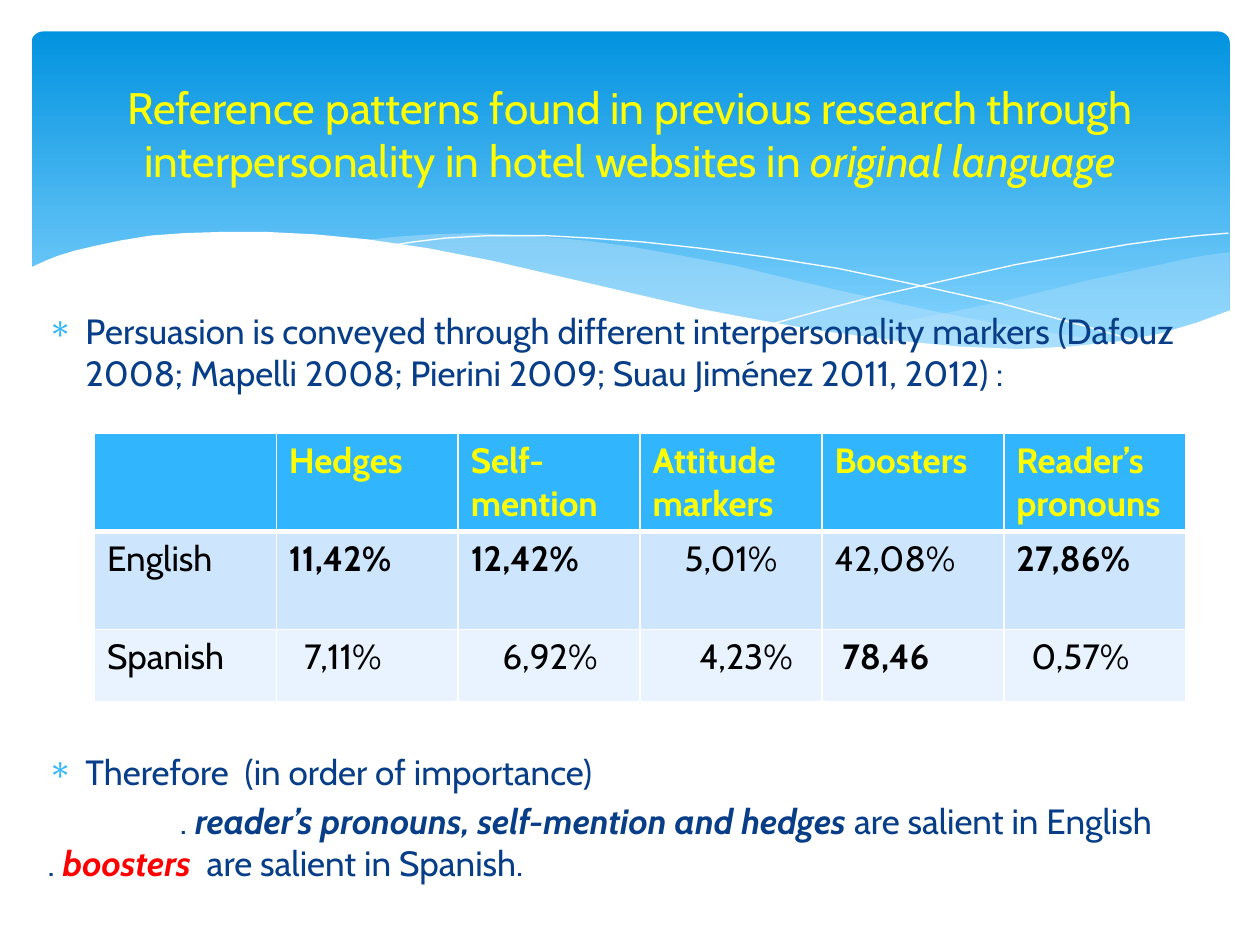
"""Build a slide on interpersonality markers in hotel websites."""
from lxml import etree
from pptx import Presentation
from pptx.dml.color import RGBColor
from pptx.enum.shapes import MSO_SHAPE
from pptx.enum.text import MSO_ANCHOR, PP_ALIGN
from pptx.oxml.ns import qn
from pptx.util import Inches, Pt

ROUNDED = MSO_SHAPE.ROUNDED_RECTANGLE
CENTER, LEFT = PP_ALIGN.CENTER, PP_ALIGN.LEFT
MIDDLE = MSO_ANCHOR.MIDDLE
TITLE_ONLY = 5
FONT = "Cabin"
COLORS = {
    "sky_top": "0293E0", "sky_bottom": "83D3FE", "mist": "C6E7FC",
    "white": "FFFFFF", "title": "FFFF00", "body": "073E87",
    "accent": "31B6FD", "alert": "FF0000", "black": "000000",
    "row_odd": "CEE5FE", "row_even": "E8F3FF",
}

RIGHT_MIST = [
    (976, 200), (948, 204), (921, 210), (861, 223), (805, 237), (753, 248),
    (706, 257), (661, 265), (691, 269), (732, 274), (769, 277), (803, 278),
    (835, 277), (863, 275), (889, 272), (913, 267), (935, 262), (949, 257),
    (976, 247)]
CENTER_MIST = [
    (893, 273), (866, 269), (807, 260), (741, 247), (668, 231), (629, 222),
    (584, 211), (541, 203), (502, 196), (465, 191), (420, 187), (380, 185),
    (344, 186), (313, 188), (286, 191), (323, 196), (362, 203), (404, 211),
    (449, 222), (530, 240), (601, 255), (665, 266), (722, 274), (773, 277),
    (818, 278), (857, 277)]
FALLING_LINE = [
    (309, 195), (328, 192), (353, 189), (387, 187), (433, 187), (469, 189),
    (510, 192), (556, 197), (608, 204), (665, 213), (727, 226), (795, 241),
    (869, 261), (907, 272)]
RISING_LINE = [
    (613, 257), (653, 246), (695, 235), (748, 223), (806, 210), (866, 199),
    (895, 194), (924, 190), (951, 187), (975, 185)]
WHITE_WAVE = [
    (977, 246), (950, 256), (920, 265), (887, 271), (850, 275), (809, 277),
    (761, 275), (708, 270), (648, 262), (603, 254), (555, 245), (503, 233),
    (447, 220), (391, 207), (340, 197), (292, 190), (250, 186), (211, 184),
    (177, 184), (146, 185), (119, 187), (95, 191), (76, 195), (59, 199),
    (46, 203), (36, 207), (23, 213), (23, 329), (977, 329)]

TABLE_ROWS = [
    ["", "Hedges", "Self-mention", "Attitude markers", "Boosters",
     "Reader’s pronouns"],
    ["English", "11,42%", "12,42%", "5,01%", "42,08%", "27,86%"],
    ["Spanish", "7,11%", "6,92%", "4,23%", "78,46", "0,57%"]]
ROW_HEIGHTS = [0.76, 0.78, 0.57]
ROW_FILLS = ["accent", "row_odd", "row_even"]
BOLD_VALUES = {"11,42%", "12,42%", "27,86%", "78,46"}
VALUE_INDENTS = {"7,11%": 0.12, "6,92%": 0.25, "4,23%": 0.37,
                 "78,46": 0.06, "0,57%": 0.12}


def rgb(name):
    """Return the named colour."""
    return RGBColor.from_string(COLORS[name])


def add_span(para, text, size, color, bold=False, italic=False):
    """Append one formatted run to a paragraph."""
    span = para.add_run()
    span.text = text
    font = span.font
    font.name, font.size = FONT, Pt(size)
    font.bold, font.italic = bold, italic
    font.color.rgb = rgb(color)


def add_sky(page):
    """Draw the gradient panel behind the title."""
    sky = page.shapes.add_shape(ROUNDED, Inches(0.25), Inches(0.25),
                                Inches(9.51), Inches(2.7))
    sky.shadow.inherit = False
    sky.adjustments[0] = 0.034
    sky.line.fill.background()
    sky.fill.gradient()
    sky.fill.gradient_angle = 270
    stops = [(0, "sky_top"), (0.9, "sky_bottom")]
    for stop, (position, color) in zip(sky.fill.gradient_stops, stops):
        stop.position = position
        stop.color.rgb = rgb(color)


def add_curve(page, points, closed):
    """Build an unformatted outline from points in hundredths of an inch."""
    builder = page.shapes.build_freeform(*points[0], scale=Inches(0.01))
    builder.add_line_segments(points[1:], close=closed)
    curve = builder.convert_to_shape()
    curve.shadow.inherit = False
    return curve


def add_wave(page, points, color, opacity=100):
    """Draw a filled wave with the given opacity in percent."""
    wave = add_curve(page, points, True)
    wave.line.fill.background()
    wave.fill.solid()
    wave.fill.fore_color.rgb = rgb(color)
    if opacity < 100:
        tint = wave.element.spPr.find(qn("a:solidFill"))[0]
        etree.SubElement(tint, qn("a:alpha"), val=str(opacity * 1000))


def add_hairline(page, points):
    """Draw a thin white open curve."""
    hairline = add_curve(page, points, False)
    hairline.fill.background()
    hairline.line.color.rgb = rgb("white")
    hairline.line.width = Pt(0)


def format_title(page):
    """Fill the title placeholder and bring it in front of the waves."""
    title = page.shapes.title
    title.left, title.top = Inches(0.5), Inches(0.37)
    title.width, title.height = Inches(9), Inches(1.37)
    title.text_frame.vertical_anchor = MIDDLE
    para = title.text_frame.paragraphs[0]
    para.alignment = CENTER
    add_span(para, "Reference patterns found in previous research through "
             "interpersonality in hotel websites in ", 25.2, "title")
    add_span(para, "original language", 25.2, "title", italic=True)
    title.element.getparent().append(title.element)


def indent(para, left, first=0):
    """Set the left margin and first-line indent in inches."""
    properties = para._p.get_or_add_pPr()
    properties.set("marL", str(Inches(left)))
    properties.set("indent", str(Inches(first)))
    return properties


def add_bullet(para):
    """Give a paragraph a hanging asterisk bullet."""
    properties = indent(para, 0.3, -0.3)
    color = etree.SubElement(properties, qn("a:buClr"))
    etree.SubElement(color, qn("a:srgbClr"), val=COLORS["accent"])
    etree.SubElement(properties, qn("a:buChar"), char="∗")


def add_body(page):
    """Write the statements above and below the table."""
    box = page.shapes.add_textbox(Inches(0.28), Inches(2.41),
                                  Inches(9.45), Inches(4.88))
    frame = box.text_frame
    frame.word_wrap = True
    claim = frame.paragraphs[0]
    therefore, english, spanish = [frame.add_paragraph() for _ in range(3)]
    therefore.space_before = Pt(204)
    english.space_before = Pt(4)
    add_bullet(claim)
    add_bullet(therefore)
    indent(english, 1.05)
    add_span(claim, "Persuasion is conveyed through different "
             "interpersonality markers (Dafouz 2008; Mapelli 2008; "
             "Pierini 2009; Suau Jiménez 2011, 2012) :", 20, "body")
    add_span(therefore, "Therefore  (in order of importance)", 20, "body")
    add_span(english, ". ", 20, "body")
    add_span(english, "reader’s pronouns, self-mention and hedges ", 20,
             "body", bold=True, italic=True)
    add_span(english, "are salient in English", 20, "body")
    add_span(spanish, ". ", 20, "body")
    add_span(spanish, "boosters", 20, "alert", bold=True, italic=True)
    add_span(spanish, "  are salient in Spanish.", 20, "body")


def add_borders(cell, bottom):
    """Draw white cell borders with the given bottom width in points."""
    properties = cell._tc.get_or_add_tcPr()
    for side, width in (("L", 1), ("R", 1), ("T", 1), ("B", bottom)):
        line = etree.SubElement(properties, qn(f"a:ln{side}"),
                                w=str(Pt(width)))
        fill = etree.SubElement(line, qn("a:solidFill"))
        etree.SubElement(fill, qn("a:srgbClr"), val=COLORS["white"])


def add_marker_table(page):
    """Add the table of marker frequencies by language."""
    table = page.shapes.add_table(3, 6, Inches(0.75), Inches(3.44),
                                  Inches(8.66), Inches(2.11)).table
    for row, height in zip(table.rows, ROW_HEIGHTS):
        row.height = Inches(height)
    for number, values in enumerate(TABLE_ROWS):
        header = number == 0
        for column, value in enumerate(values):
            cell = table.cell(number, column)
            add_borders(cell, 3 if header else 1)
            cell.fill.solid()
            cell.fill.fore_color.rgb = rgb(ROW_FILLS[number])
            cell.margin_left = Inches(0.1 + VALUE_INDENTS.get(value, 0))
            para = cell.text_frame.paragraphs[0]
            para.alignment = CENTER if value == "5,01%" else LEFT
            if value:
                add_span(para, value, 20, "title" if header else "black",
                         bold=header or value in BOLD_VALUES)


def main():
    """Build and save the deck."""
    deck = Presentation()
    deck.slide_width, deck.slide_height = Inches(10), Inches(7.5)
    page = deck.slides.add_slide(deck.slide_layouts[TITLE_ONLY])
    add_sky(page)
    add_wave(page, RIGHT_MIST, "mist", 29)
    add_wave(page, CENTER_MIST, "mist", 40)
    add_hairline(page, FALLING_LINE)
    add_hairline(page, RISING_LINE)
    add_wave(page, WHITE_WAVE, "white")
    add_body(page)
    format_title(page)
    add_marker_table(page)
    deck.save("out.pptx")


if __name__ == "__main__":
    main()
